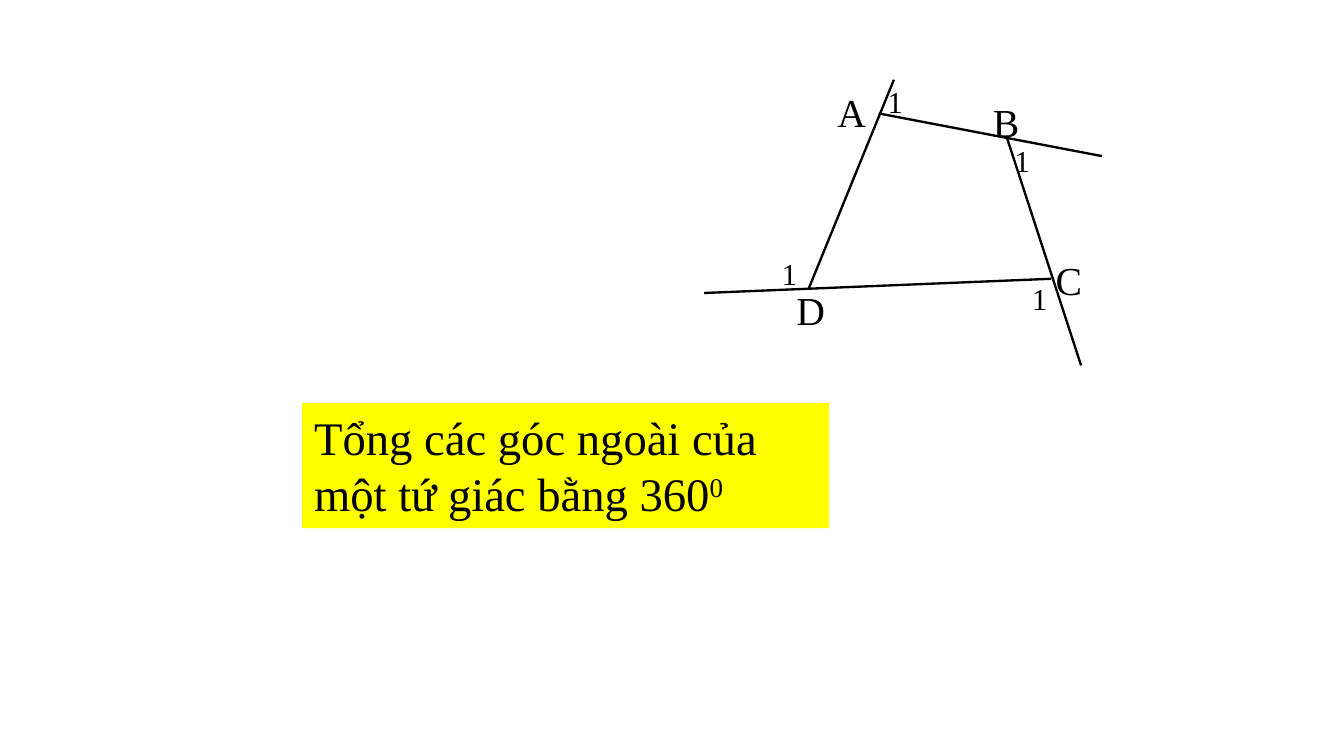
from pptx import Presentation
from pptx.dml.color import RGBColor
from pptx.enum.shapes import MSO_CONNECTOR, MSO_SHAPE
from pptx.enum.text import MSO_ANCHOR, PP_ALIGN
from pptx.oxml.ns import qn
from pptx.util import Cm, Pt
from lxml import etree

STRAIGHT = MSO_CONNECTOR.STRAIGHT
RECTANGLE = MSO_SHAPE.RECTANGLE
LEFT = PP_ALIGN.LEFT
TOP = MSO_ANCHOR.TOP

COLORS = {"ink": "000000", "highlight": "FFFF00"}
FONT = "Times New Roman"
VERTEX_SIZE, ANGLE_SIZE, RULE_SIZE = 34, 26, 40

# All lengths in cm. Each side runs on past its second vertex to a free end.
VERTICES = {"A": (26.57, 3.43), "B": (30.43, 4.11),
            "C": (31.78, 8.43), "D": (24.46, 8.71)}
EXTENDED_SIDES = [("D", (27.03, 2.41)), ("C", (21.29, 8.86)),
                  ("B", (32.69, 11.05)), ("A", (33.32, 4.72))]
VERTEX_LABELS = [("D", 23.83, 8.53), ("A", 25.07, 2.54),
                 ("B", 29.77, 2.82), ("C", 31.67, 7.62)]
ANGLE_LABELS = [("1", 30.96, 8.36), ("1", 23.39, 7.59),
                ("1", 26.59, 2.39), ("1", 30.43, 4.17)]
RULE = "Tổng các góc ngoài của một tứ giác bằng 360"
DEGREE = "0"
RULE_BOX = (9.14, 12.19, 15.93, 3.78)


def color(name):
    return RGBColor.from_string(COLORS[name])


def format_run(run, size):
    run.font.name = FONT
    run.font.size = Pt(size)
    run.font.color.rgb = color("ink")


def add_side(slide, start, end):
    side = slide.shapes.add_connector(STRAIGHT, *map(Cm, start + end))
    side.line.color.rgb = color("ink")
    side.line.width = Pt(2)
    etree.SubElement(side._element.spPr, qn("a:effectLst"))


def add_label(slide, text, left, top, width, height, size):
    label = slide.shapes.add_textbox(Cm(left), Cm(top), Cm(width), Cm(height))
    label.text_frame.word_wrap = True
    label.text_frame.text = text
    format_run(label.text_frame.paragraphs[0].runs[0], size)


def add_rule(slide):
    box = slide.shapes.add_shape(RECTANGLE, *map(Cm, RULE_BOX))
    box.shadow.inherit = False
    box.fill.solid()
    box.fill.fore_color.rgb = color("highlight")
    box.line.fill.background()
    frame = box.text_frame
    frame.word_wrap = True
    frame.vertical_anchor = TOP
    frame.margin_left = frame.margin_right = Cm(0.36)
    frame.margin_top = frame.margin_bottom = Cm(0.18)
    frame.text = RULE
    paragraph = frame.paragraphs[0]
    paragraph.alignment = LEFT
    degree = paragraph.add_run()
    degree.text = DEGREE
    for run in paragraph.runs:
        format_run(run, RULE_SIZE)
    degree.font._element.set("baseline", "30000")


def main():
    deck = Presentation()
    deck.slide_width, deck.slide_height = Cm(40.64), Cm(22.86)
    slide = deck.slides.add_slide(deck.slide_layouts[6])
    for vertex, free_end in EXTENDED_SIDES:
        add_side(slide, VERTICES[vertex], free_end)
    for name, left, top in VERTEX_LABELS:
        add_label(slide, name, left, top, 1.6, 1.7, VERTEX_SIZE)
    for number, left, top in ANGLE_LABELS:
        add_label(slide, number, left, top, 1.42, 1.37, ANGLE_SIZE)
    add_rule(slide)
    deck.save("out.pptx")


if __name__ == "__main__":
    main()
